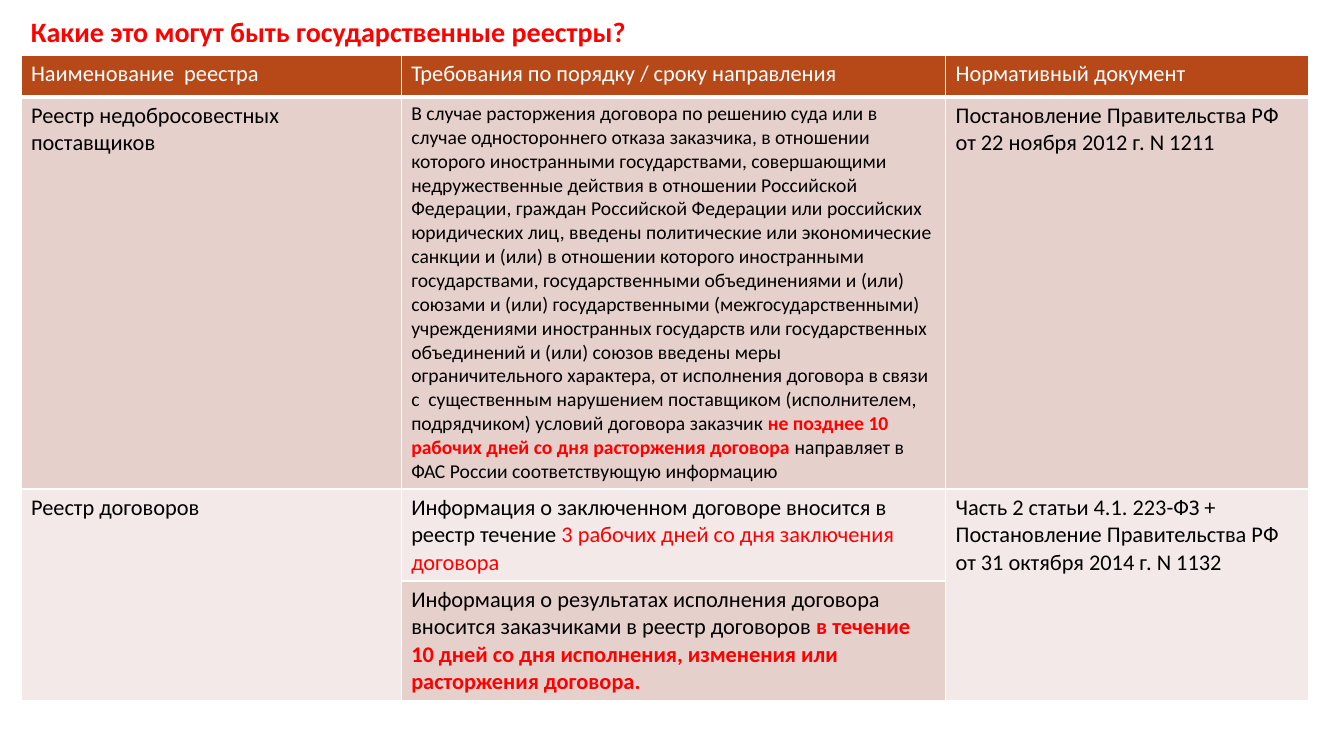
from lxml.etree import SubElement
from pptx import Presentation
from pptx.dml.color import RGBColor
from pptx.enum.text import MSO_ANCHOR
from pptx.oxml.ns import qn
from pptx.util import Cm, Pt

RED = RGBColor(0xFF, 0x00, 0x00)
BLACK = RGBColor(0x00, 0x00, 0x00)
WHITE = RGBColor(0xFF, 0xFF, 0xFF)
RUST = RGBColor(0xB7, 0x49, 0x19)
ROSE = RGBColor(0xE6, 0xD0, 0xCC)
PALE = RGBColor(0xF3, 0xE9, 0xE8)

TITLE = {"name": "Calibri", "size": Pt(20), "bold": True}
BODY = {"name": "Calibri", "size": Pt(16), "bold": False}
STRONG = BODY | {"bold": True}
SMALL = BODY | {"size": Pt(14)}
SMALL_STRONG = SMALL | {"bold": True}

COLUMNS = (9.58, 13.72, 9.16)
ROWS = (1.04, 9.88, 2.32, 3.02)

HEADINGS = (
    "Наименование  реестра",
    "Требования по порядку / сроку направления",
    "Нормативный документ",
)

TERMINATION = (
    "В случае расторжения договора по решению суда или в случае "
    "одностороннего отказа заказчика, в отношении которого иностранными "
    "государствами, совершающими недружественные действия в отношении "
    "Российской Федерации, граждан Российской Федерации или российских "
    "юридических лиц, введены политические или экономические санкции и (или) "
    "в отношении которого иностранными государствами, государственными "
    "объединениями и (или) союзами и (или) государственными "
    "(межгосударственными) учреждениями иностранных государств или "
    "государственных объединений и (или) союзов введены меры ограничительного "
    "характера, от исполнения договора в связи с  существенным нарушением "
    "поставщиком (исполнителем, подрядчиком) условий договора заказчик "
)

CONTENT = (
    [[(heading, BODY, WHITE)] for heading in HEADINGS],
    [
        [("Реестр недобросовестных поставщиков", BODY, BLACK)],
        [
            (TERMINATION, SMALL, BLACK),
            ("не позднее 10 рабочих дней со дня расторжения договора ", SMALL_STRONG, RED),
            ("направляет в ФАС России соответствующую информацию", SMALL, BLACK),
        ],
        [("Постановление Правительства РФ от 22 ноября 2012 г. N 1211", BODY, BLACK)],
    ],
    [
        [("Реестр договоров", BODY, BLACK)],
        [
            ("Информация о заключенном договоре вносится в реестр течение ", BODY, BLACK),
            ("3 рабочих дней со дня заключения договора", BODY, RED),
        ],
        [(
            "Часть 2 статьи 4.1. 223-ФЗ + Постановление Правительства РФ "
            "от 31 октября 2014 г. N 1132", BODY, BLACK,
        )],
    ],
    [
        [],
        [
            ("Информация о результатах исполнения договора вносится "
             "заказчиками в реестр договоров ", BODY, BLACK),
            ("в течение 10 дней со дня исполнения, изменения или "
             "расторжения договора.", STRONG, RED),
        ],
        [],
    ],
)
FILLS = (RUST, ROSE, PALE, ROSE)


def write_spans(para, spans):
    for text, style, color in spans:
        span = para.add_run()
        span.text = text
        for key, value in style.items():
            setattr(span.font, key, value)
        span.font.color.rgb = color


def add_title(page, text):
    box = page.shapes.add_textbox(Cm(0.53), Cm(0.25), Cm(32.89), Cm(1.17))
    frame = box.text_frame
    frame.word_wrap = True
    frame.vertical_anchor = MSO_ANCHOR.MIDDLE
    para = frame.paragraphs[0]
    para.line_spacing = 0.9
    write_spans(para, [(text, TITLE, RED)])


def draw_borders(cell, bottom):
    properties = cell._tc.get_or_add_tcPr()
    for side, width in (("L", 1), ("R", 1), ("T", 1), ("B", bottom)):
        line = SubElement(properties, qn(f"a:ln{side}"), w=str(Pt(width)))
        fill = SubElement(line, qn("a:solidFill"))
        SubElement(fill, qn("a:srgbClr"), val=str(WHITE))


def fill_cell(cell, spans, color, bottom):
    draw_borders(cell, bottom)
    cell.fill.solid()
    cell.fill.fore_color.rgb = color
    write_spans(cell.text_frame.paragraphs[0], spans)


def add_registry_table(page):
    frame = page.shapes.add_table(
        len(ROWS), len(COLUMNS), Cm(0.53), Cm(1.4), Cm(sum(COLUMNS)), Cm(sum(ROWS))
    )
    table = frame.table
    for column, width in zip(table.columns, COLUMNS):
        column.width = Cm(width)
    for row, height in zip(table.rows, ROWS):
        row.height = Cm(height)
    for index, (row, color) in enumerate(zip(CONTENT, FILLS)):
        for position, spans in enumerate(row):
            fill_cell(table.cell(index, position), spans, color, 1 if index else 3)
    for position in (0, 2):
        table.cell(2, position).merge(table.cell(3, position))


def main():
    deck = Presentation()
    deck.slide_width, deck.slide_height = Cm(33.87), Cm(19.05)
    page = deck.slides.add_slide(deck.slide_layouts[6])
    add_title(page, "Какие это могут быть государственные реестры?")
    add_registry_table(page)
    deck.save("out.pptx")


if __name__ == "__main__":
    main()
